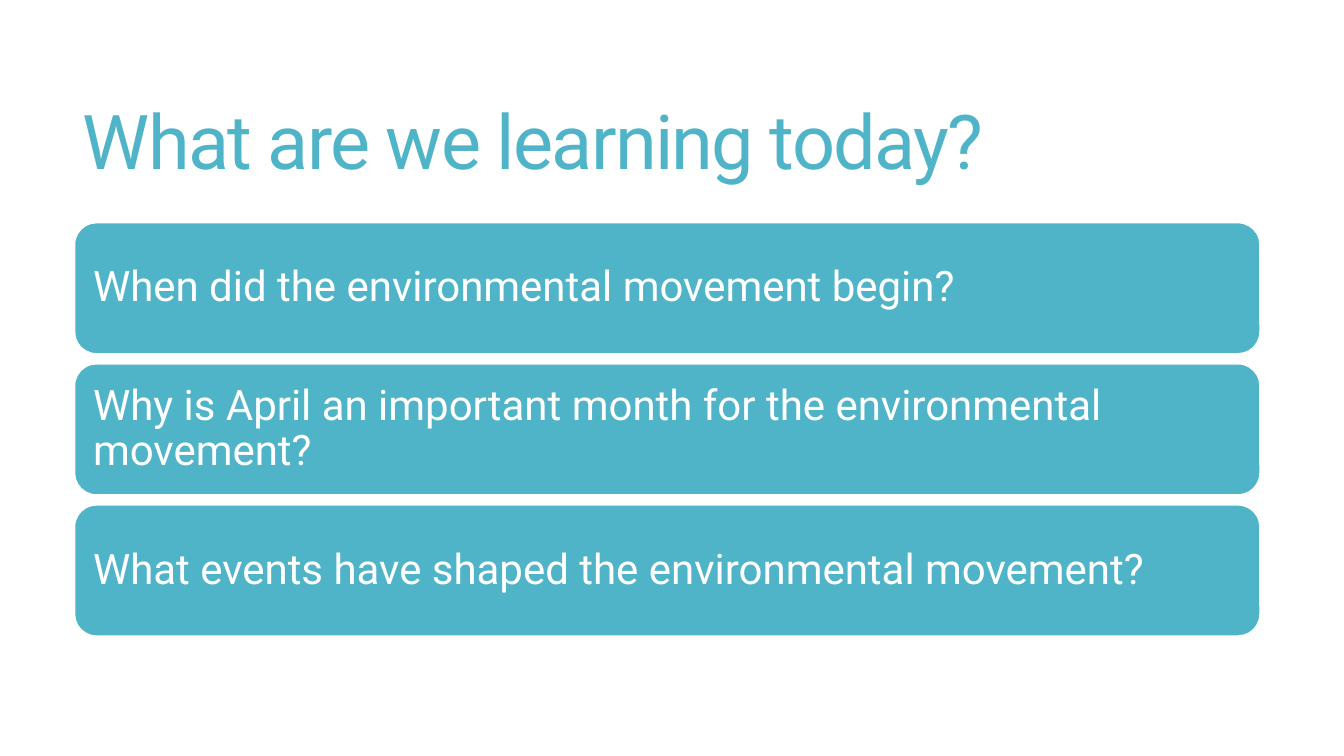
from pptx import Presentation
from pptx.dml.color import RGBColor
from pptx.enum.shapes import MSO_SHAPE
from pptx.enum.text import MSO_ANCHOR, PP_ALIGN
from pptx.util import Pt

ROUNDED = MSO_SHAPE.ROUNDED_RECTANGLE
MIDDLE = MSO_ANCHOR.MIDDLE
LEFT = PP_ALIGN.LEFT

TITLE = "What are we learning today?"
QUESTIONS = [
    "When did the environmental movement begin?",
    "Why is April an important month for the environmental movement?",
    "What events have shaped the environmental movement?",
]

FONT = "Roboto"
TEAL = "50B4C8"
WHITE = "FFFFFF"

TITLE_BOX = (51.84, 39.6, 848.16, 130.32)
CARD_LEFT, CARD_TOP = 53.28, 159.12
CARD_WIDTH, CARD_HEIGHT = 846.72, 93.6
CARD_STEP = 100.8
CARD_INSET = 8.64


def color(value):
    return RGBColor.from_string(value)


def write(shape, text, size, ink, line_spacing):
    """Put one left-aligned, vertically centred paragraph into a shape."""
    frame = shape.text_frame
    frame.word_wrap = True
    frame.vertical_anchor = MIDDLE
    para = frame.paragraphs[0]
    para.text = text
    para.alignment = LEFT
    para.line_spacing = line_spacing
    para.font.name = FONT
    para.font.size = Pt(size)
    para.font.color.rgb = color(ink)
    return para


def add_title(page):
    title = page.shapes.title
    title.left, title.top, title.width, title.height = map(Pt, TITLE_BOX)
    para = write(title, TITLE, 54, TEAL, 0.85)
    # Letter spacing is in hundredths of a point
    para.runs[0]._r.get_or_add_rPr().set("spc", "-120")


def add_card(page, index, question):
    top = CARD_TOP + index * CARD_STEP
    card = page.shapes.add_shape(
        ROUNDED, Pt(CARD_LEFT), Pt(top), Pt(CARD_WIDTH), Pt(CARD_HEIGHT))
    card.shadow.inherit = False
    card.fill.solid()
    card.fill.fore_color.rgb = color(TEAL)
    card.line.color.rgb = color(WHITE)
    card.line.width = Pt(1)
    frame = card.text_frame
    frame.margin_left = frame.margin_right = Pt(CARD_INSET)
    frame.margin_top = frame.margin_bottom = Pt(CARD_INSET)
    write(card, question, 30, WHITE, 0.9)


def main():
    deck = Presentation()
    deck.slide_width, deck.slide_height = Pt(960), Pt(540)
    page = deck.slides.add_slide(deck.slide_layouts.get_by_name("Title Only"))
    add_title(page)
    for index, question in enumerate(QUESTIONS):
        add_card(page, index, question)
    deck.save("out.pptx")


if __name__ == "__main__":
    main()
